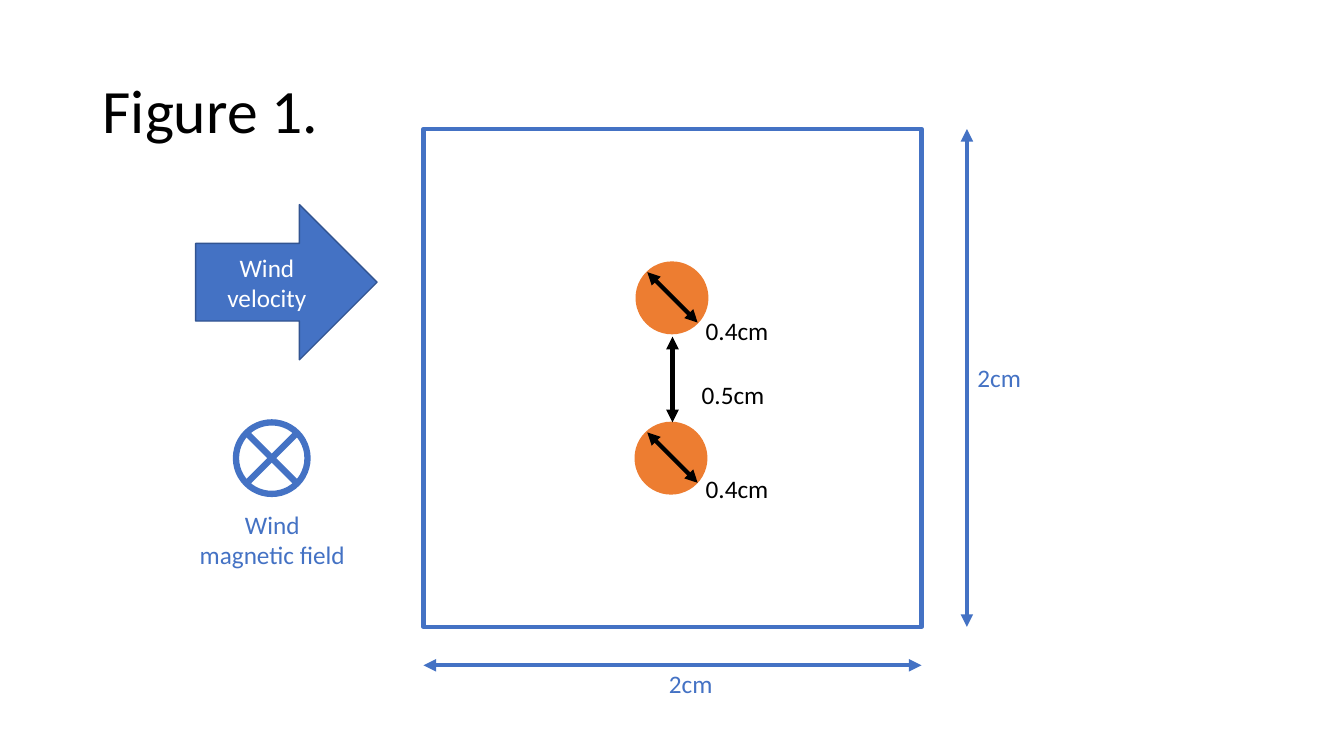
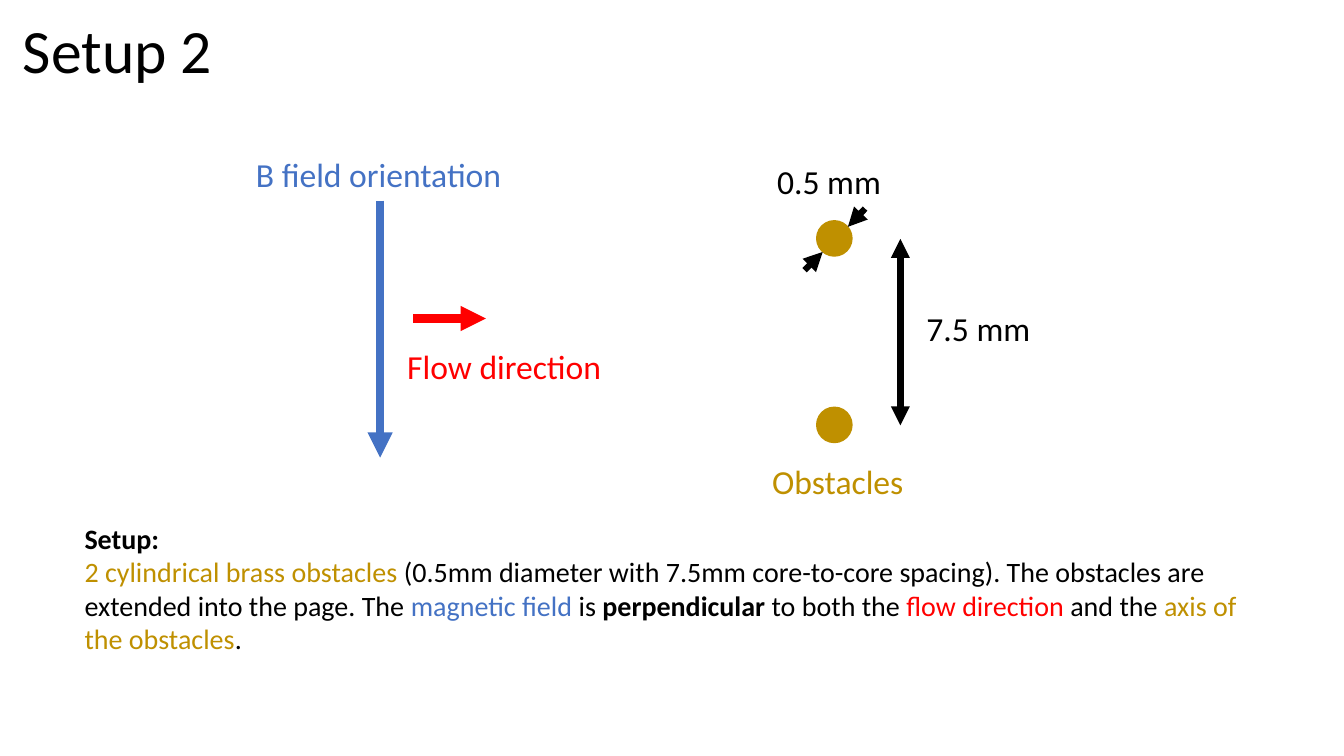
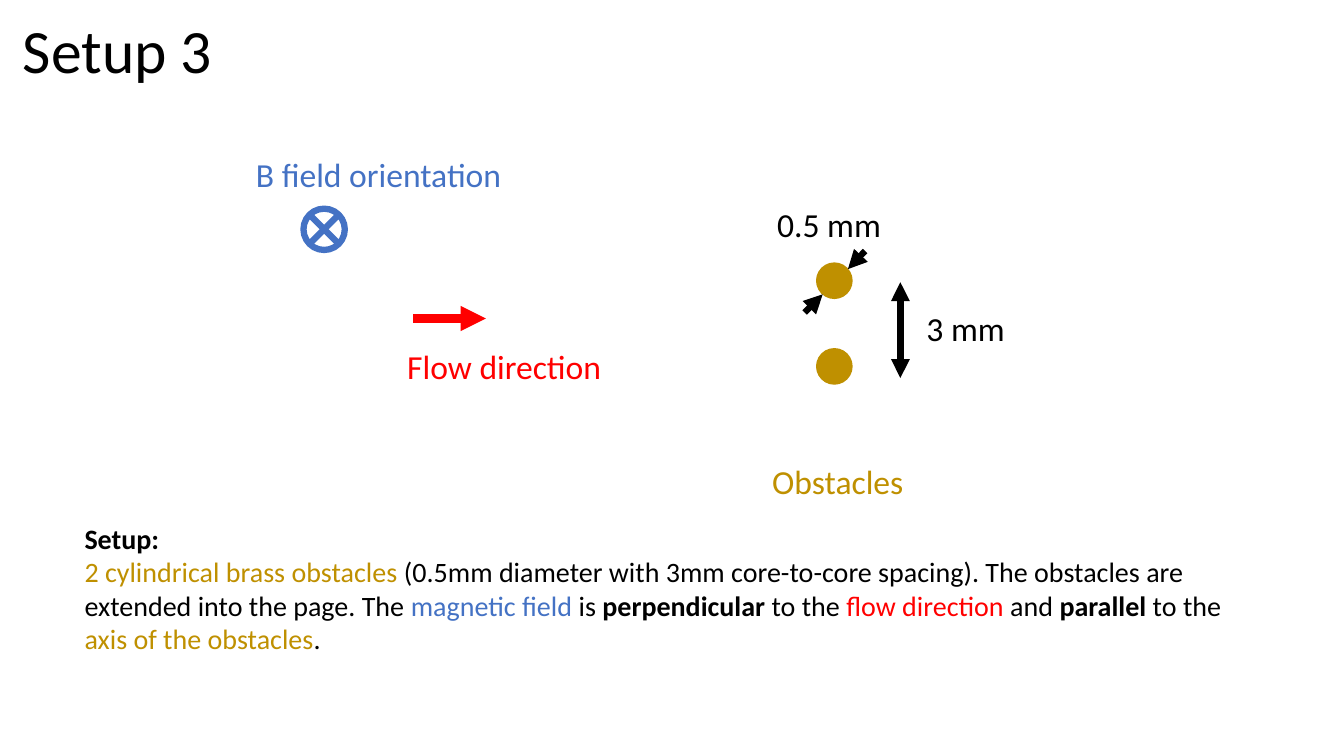
from dataclasses import dataclass
from typing import Optional

from lxml.etree import SubElement
from pptx import Presentation
from pptx.dml.color import RGBColor
from pptx.enum.shapes import MSO_CONNECTOR as Link, MSO_SHAPE as Shape
from pptx.enum.text import MSO_ANCHOR as Anchor, MSO_AUTO_SIZE as Fit, PP_ALIGN as Align
from pptx.oxml.ns import qn
from pptx.util import Emu, Pt

PX = 9144
FONT = "Calibri"
COLORS = {
    "black": "000000",
    "white": "FFFFFF",
    "blue": "4472C4",
    "navy": "325491",
    "orange": "ED7D31",
    "brass": "BF9000",
    "red": "FF0000",
}


@dataclass(frozen=True)
class Arrow:
    x1: int
    y1: int
    x2: int
    y2: int
    color: str = "black"
    weight: float = 3
    head: bool = True
    tail: bool = True


@dataclass(frozen=True)
class Label:
    text: str
    x: int
    y: int
    w: int
    h: int
    color: str = "black"
    size: int = 18
    align: Align = Align.CENTER
    wrap: bool = True


@dataclass(frozen=True)
class Run:
    text: str
    color: str = "black"
    bold: bool = False


@dataclass(frozen=True)
class Setup:
    title: str
    dot_y: int
    pitch: int
    span_y: int
    span: int
    spacing: Label
    field: Optional[Arrow]
    details: tuple[Run, ...]


def px(n: int) -> Emu:
    return Emu(n * PX)


def rgb(color: str) -> RGBColor:
    return RGBColor.from_string(COLORS[color])


def style_paragraph(p, size: int, color: str, align: Align = Align.LEFT) -> None:
    p.alignment = align
    p.font.name = FONT
    p.font.size = Pt(size)
    p.font.color.rgb = rgb(color)


def add_shape(slide, kind: Shape, x: int, y: int, w: int, h: int,
              fill: Optional[str], line: str, weight: float):
    sp = slide.shapes.add_shape(kind, px(x), px(y), px(w), px(h))
    sp.shadow.inherit = False
    if fill:
        sp.fill.solid()
        sp.fill.fore_color.rgb = rgb(fill)
    else:
        sp.fill.background()
    sp.line.color.rgb = rgb(line)
    sp.line.width = Pt(weight)
    return sp


def add_dot(slide, x: int, y: int, d: int, color: str) -> None:
    add_shape(slide, Shape.OVAL, x, y, d, d, color, color, 1)


def add_arrow(slide, a: Arrow) -> None:
    cxn = slide.shapes.add_connector(Link.STRAIGHT, px(a.x1), px(a.y1), px(a.x2), px(a.y2))
    cxn.line.color.rgb = rgb(a.color)
    cxn.line.width = Pt(a.weight)
    ln = cxn.line._get_or_add_ln()
    for tag, shown in (("a:headEnd", a.head), ("a:tailEnd", a.tail)):
        if shown:
            SubElement(ln, qn(tag), type="triangle")
    SubElement(cxn._element.spPr, qn("a:effectLst"))


def add_into_page(slide, x: int, y: int, d: int) -> None:
    add_shape(slide, Shape.OVAL, x, y, d, d, None, "blue", 4.5)
    inset = round(d * 0.146)
    left, right, top, bottom = x + inset, x + d - inset, y + inset, y + d - inset
    for y1, y2 in ((top, bottom), (bottom, top)):
        add_arrow(slide, Arrow(left, y1, right, y2, "blue", 4.5, False, False))


def add_box(slide, x: int, y: int, w: int, h: int, wrap: bool = True):
    tf = slide.shapes.add_textbox(px(x), px(y), px(w), px(h)).text_frame
    tf.word_wrap = wrap
    return tf


def add_label(slide, label: Label) -> None:
    tf = add_box(slide, label.x, label.y, label.w, label.h, label.wrap)
    tf.auto_size = Fit.SHAPE_TO_FIT_TEXT
    p = tf.paragraphs[0]
    p.text = label.text
    style_paragraph(p, label.size, label.color, label.align)


def caption(text: str, x: int, y: int, w: int, color: str = "black") -> Label:
    return Label(text, x, y, w, 50, color, 24, Align.LEFT, False)


def add_title(slide, text: str, x: int, y: int, h: int) -> None:
    tf = add_box(slide, x, y, 1150, h)
    tf.vertical_anchor = Anchor.MIDDLE
    p = tf.paragraphs[0]
    p.text = text
    p.line_spacing = 0.9
    style_paragraph(p, 44, "black")


def add_details(slide, runs: tuple[Run, ...]) -> None:
    tf = add_box(slide, 74, 512, 1184, 145)
    tf.auto_size = Fit.SHAPE_TO_FIT_TEXT
    heading, body = tf.paragraphs[0], tf.add_paragraph()
    heading.text = "Setup:"
    for p in (heading, body):
        style_paragraph(p, 20, "black")
    heading.font.bold = True
    for run in runs:
        r = body.add_run()
        r.text = run.text
        r.font.color.rgb = rgb(run.color)
        r.font.bold = run.bold


def build_figure(slide) -> None:
    add_title(slide, "Figure 1.", 92, 40, 145)
    left, top, side = 420, 128, 494
    right, bottom = left + side, top + side
    add_shape(slide, Shape.RECTANGLE, left, top, side, side, None, "blue", 3)
    add_arrow(slide, Arrow(959, top, 959, bottom, "blue"))
    add_arrow(slide, Arrow(left, 660, right, 660, "blue"))

    for x, y in ((631, 260), (630, 419)):
        add_dot(slide, x, y, 71, "orange")
        add_arrow(slide, Arrow(642, y + 10, 692, y + 60))
    add_arrow(slide, Arrow(667, 334, 667, 419))

    wind = add_shape(slide, Shape.RIGHT_ARROW, 194, 203, 180, 154, "blue", "navy", 1)
    wind.text_frame.vertical_anchor = Anchor.MIDDLE
    p = wind.text_frame.paragraphs[0]
    p.text = "Wind velocity"
    style_paragraph(p, 18, "white", Align.CENTER)

    add_into_page(slide, 234, 419, 71)
    for label in (
        Label("Wind magnetic field", 184, 500, 172, 71, "blue"),
        Label("0.4cm", 685, 465, 92, 40),
        Label("0.5cm", 681, 371, 92, 40),
        Label("0.4cm", 685, 308, 92, 40),
        Label("2cm", 639, 658, 92, 40, "blue"),
        Label("2cm", 945, 355, 92, 40, "blue"),
    ):
        add_label(slide, label)


def build_setup(slide, setup: Setup) -> None:
    add_title(slide, setup.title, 13, 13, 81)
    y = setup.dot_y
    for dot_y in (y, y + setup.pitch):
        add_dot(slide, 810, dot_y, 35, "brass")
    for arrow in (
        Arrow(410, 316, 482, 316, "red", 6, head=False),
        Arrow(893, setup.span_y, 893, setup.span_y + setup.span, weight=4.5),
        Arrow(816, y + 31, 798, y + 49, weight=4.5, tail=False),
        Arrow(841, y + 6, 858, y - 12, weight=4.5, tail=False),
    ):
        add_arrow(slide, arrow)
    for label in (
        caption("B field orientation", 244, 148, 266, "blue"),
        caption("Flow direction", 394, 338, 215, "red"),
        setup.spacing,
        caption("0.5 mm", 761, y - 64, 124),
        caption("Obstacles", 756, 452, 152, "brass"),
    ):
        add_label(slide, label)
    add_details(slide, setup.details)
    if setup.field:
        add_arrow(slide, setup.field)
    else:
        add_into_page(slide, 301, 207, 41)


def details(spacing: str, *relation: Run) -> tuple[Run, ...]:
    return (
        Run("2 cylindrical brass obstacles ", "brass"),
        Run(f"(0.5mm diameter with {spacing} core-to-core spacing). "
            "The obstacles are extended into the page. The "),
        Run("magnetic field ", "blue"),
        Run("is "),
        Run("perpendicular", bold=True),
        *relation,
        Run("axis of the obstacles", "brass"),
        Run("."),
    )


FLOW = Run("flow direction ", "red")
SETUPS = (
    Setup("Setup 2", 219, 185, 237, 185, caption("7.5 mm", 909, 301, 124),
          Arrow(377, 199, 377, 454, "blue", 6, head=False),
          details("7.5mm", Run(" to both the "), FLOW, Run("and the "))),
    Setup("Setup 3", 261, 85, 280, 95, caption("3 mm", 909, 301, 98), None,
          details("3mm", Run(" to the "), FLOW, Run("and "),
                  Run("parallel", bold=True), Run(" to the "))),
)


def main() -> None:
    prs = Presentation()
    prs.slide_width, prs.slide_height = px(1333), px(750)
    blank = prs.slide_layouts[6]
    build_figure(prs.slides.add_slide(blank))
    for setup in SETUPS:
        build_setup(prs.slides.add_slide(blank), setup)
    prs.save("out.pptx")


if __name__ == "__main__":
    main()
